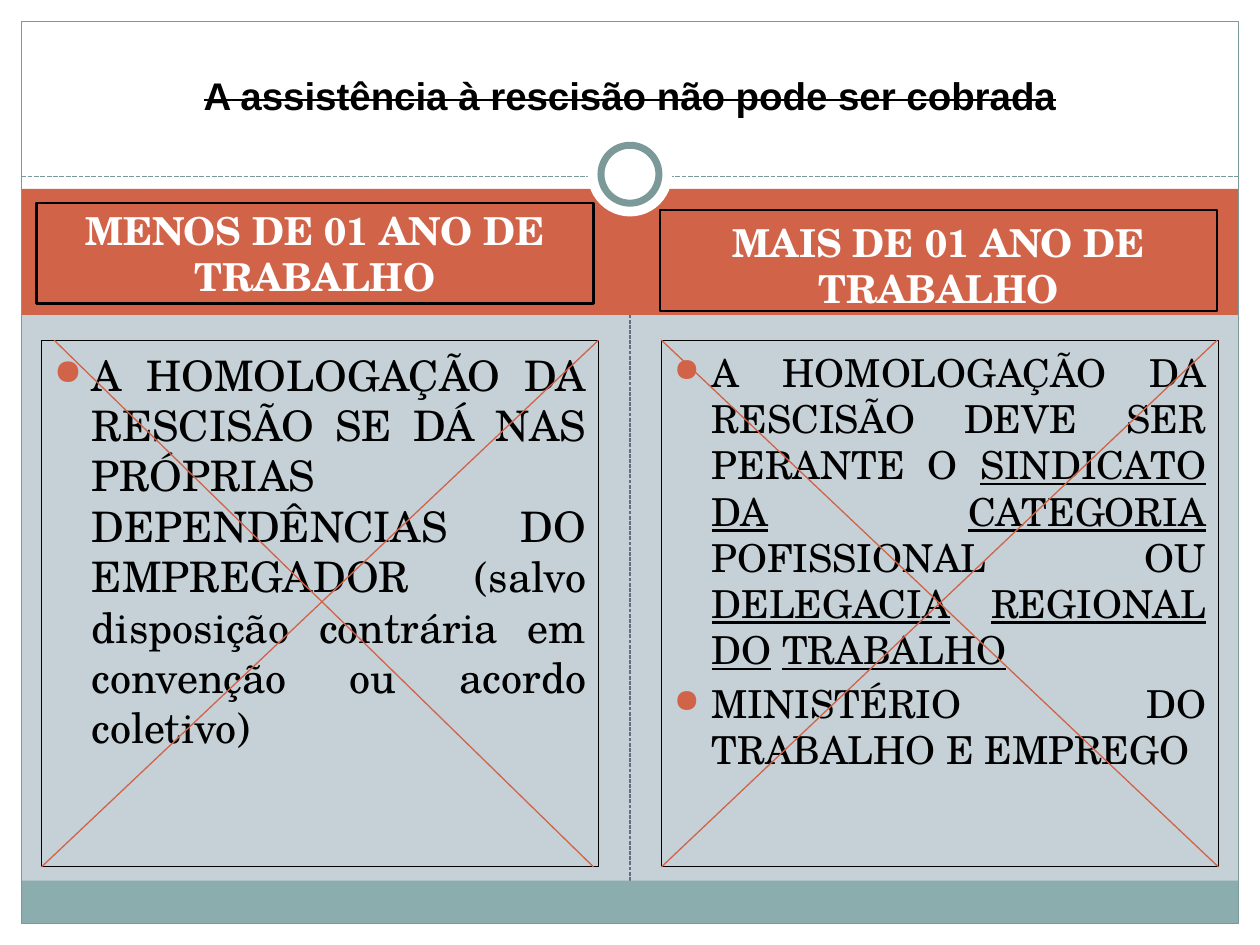
import pptx
import pptx.util
import pptx.dml.color
import pptx.enum.dml
import pptx.enum.shapes
import pptx.enum.text
import lxml.etree
from dataclasses import dataclass
from typing import NamedTuple, Optional

RGB = pptx.dml.color.RGBColor
WHITE = RGB(0xFF, 0xFF, 0xFF)
BLACK = RGB(0, 0, 0)
RUST = RGB(0xD1, 0x63, 0x49)
TEAL = RGB(0x8C, 0xAD, 0xAE)
SLATE = RGB(0x7C, 0x99, 0x9A)
VIOLET = RGB(0x64, 0x6B, 0x86)
MIST = RGB(0xC5, 0xD1, 0xD7)

SERIF = "TeX Gyre Schola"
COLUMNS, ROWS = 100, 75
CELL = pptx.util.Inches(0.1)
MARGIN = 1.7
INNER = COLUMNS - 2 * MARGIN
CENTER = COLUMNS / 2

RECTANGLE = pptx.enum.shapes.MSO_SHAPE.RECTANGLE
OVAL = pptx.enum.shapes.MSO_SHAPE.OVAL
ALIGN = pptx.enum.text.PP_ALIGN
ANCHOR = pptx.enum.text.MSO_ANCHOR


class Area(NamedTuple):
    column: float
    row: float
    width: float
    height: float


@dataclass
class Panel:
    area: Area
    fill: Optional[RGB] = None
    outline: Optional[RGB] = None
    weight: float = 0.75
    kind: pptx.enum.shapes.MSO_SHAPE = RECTANGLE


@dataclass
class Rule:
    start: tuple[float, float]
    end: tuple[float, float]
    color: RGB = RUST
    weight: float = 0.75
    dashed: bool = False


@dataclass
class Style:
    size: float
    face: str = SERIF
    color: RGB = BLACK
    bold: bool = False
    align: ALIGN = ALIGN.CENTER
    bullet: bool = False


@dataclass
class Topic:
    heading: str
    heading_area: Area
    heading_inset: float
    items: list[str]
    body_area: Area
    size: float
    strokes: list[tuple[float, float]]


def cells(count: float) -> int:
    return round(count * CELL)


def ring(diameter: float) -> Area:
    return Area(CENTER - diameter / 2, 13.83 - diameter / 2, diameter, diameter)


def draw_panel(page, panel: Panel):
    shape = page.shapes.add_shape(panel.kind, *map(cells, panel.area))
    shape.shadow.inherit = False
    if panel.fill is None:
        shape.fill.background()
    else:
        shape.fill.solid()
        shape.fill.fore_color.rgb = panel.fill
    if panel.outline is None:
        shape.line.fill.background()
    else:
        shape.line.color.rgb = panel.outline
        shape.line.width = pptx.util.Pt(panel.weight)
    return shape


def draw_rule(page, rule: Rule) -> None:
    line = page.shapes.add_connector(
        pptx.enum.shapes.MSO_CONNECTOR.STRAIGHT, *map(cells, rule.start + rule.end))
    line.line.color.rgb = rule.color
    line.line.width = pptx.util.Pt(rule.weight)
    if rule.dashed:
        line.line.dash_style = pptx.enum.dml.MSO_LINE.SQUARE_DOT
    properties = line._element.spPr
    lxml.etree.SubElement(properties, pptx.oxml.ns.qn("a:effectLst"))


def add_bullet(para) -> None:
    properties = para._p.get_or_add_pPr()
    properties.set("marL", str(cells(3)))
    properties.set("indent", str(-cells(3)))
    qn = pptx.oxml.ns.qn
    tint = lxml.etree.SubElement(properties, qn("a:buClr"))
    lxml.etree.SubElement(tint, qn("a:srgbClr"), val=str(RUST))
    lxml.etree.SubElement(properties, qn("a:buSzPct"), val="85000")
    lxml.etree.SubElement(properties, qn("a:buChar"), char="●")


def write(box, texts: list[str], style: Style, anchor: ANCHOR, top: float, bottom: float) -> None:
    frame = box.text_frame
    frame.word_wrap = True
    frame.vertical_anchor = anchor
    frame.margin_top, frame.margin_bottom = cells(top), cells(bottom)
    for index, text in enumerate(texts):
        para = frame.add_paragraph() if index else frame.paragraphs[0]
        para.alignment = style.align
        if index:
            para.space_before = pptx.util.Pt(style.size * 0.2)
        if style.bullet:
            add_bullet(para)
        para.font.size = pptx.util.Pt(style.size)
        para.font.name = style.face
        para.font.bold = style.bold
        para.font.color.rgb = style.color
        for position, part in enumerate(text.split("_")):
            span = para.add_run()
            span.text = part
            span.font.color.rgb = style.color
            if position % 2:
                span.font.underline = True


def draw_title(page, text: str) -> None:
    box = page.shapes.add_textbox(*map(cells, Area(5.9, 5.2, 88.2, 4.7)))
    write(box, [text], Style(22, "Arial", bold=True), ANCHOR.TOP, 0.5, 0.5)
    span = box.text_frame.paragraphs[0].runs[0]
    span._r.get_or_add_rPr().set("strike", "sngStrike")


def draw_topic(page, topic: Topic) -> None:
    heading = draw_panel(page, Panel(topic.heading_area, outline=BLACK, weight=1.25))
    write(heading, [topic.heading], Style(22, color=WHITE, bold=True),
          ANCHOR.MIDDLE, topic.heading_inset, 0)
    body = draw_panel(page, Panel(topic.body_area, outline=BLACK))
    write(body, topic.items, Style(topic.size, align=ALIGN.JUSTIFY, bullet=True),
          ANCHOR.TOP, 0.7, 0.5)
    top = topic.body_area.row
    bottom = top + topic.body_area.height
    (falling_start, falling_end), (rising_start, rising_end) = topic.strokes
    draw_rule(page, Rule((falling_start, top), (falling_end, bottom)))
    draw_rule(page, Rule((rising_start, bottom), (rising_end, top)))


BACKDROP = [
    Rule((CENTER, 69.9), (CENTER, 24.1), VIOLET, dashed=True),
    Panel(Area(0, 0, COLUMNS, 15.8), WHITE),
    Panel(Area(0, 73.3, COLUMNS, MARGIN), WHITE),
    Panel(Area(0, 0, MARGIN, ROWS), WHITE),
    Panel(Area(COLUMNS - MARGIN, 0, MARGIN, ROWS), WHITE),
    Panel(Area(MARGIN, 15, INNER, 10), RUST),
    Panel(Area(MARGIN, 69.9, INNER, 3.4), TEAL),
    Rule((MARGIN, 14), (COLUMNS - MARGIN, 14), SLATE, 0.9, True),
    Panel(Area(MARGIN, MARGIN, INNER, ROWS - 2 * MARGIN), outline=SLATE),
    Panel(ring(6.7), WHITE, kind=OVAL),
    Panel(ring(4.6), WHITE, SLATE, 4, OVAL),
]

TOPICS = [
    Topic("MENOS DE 01 ANO DE TRABALHO", Area(2.9, 16.1, 44.2, 8), 0,
          ["A HOMOLOGAÇÃO DA RESCISÃO SE DÁ NAS PRÓPRIAS DEPENDÊNCIAS DO EMPREGADOR "
           "(salvo disposição contrária em convenção ou acordo coletivo)"],
          Area(3.3, 27, 44.2, 41.8), 24, [(4.3, 47.1), (3.3, 47.5)]),
    Topic("MAIS DE 01 ANO DE TRABALHO", Area(52.4, 16.7, 44.2, 8), 0.7,
          ["A HOMOLOGAÇÃO DA RESCISÃO DEVE SER PERANTE O _SINDICATO_ _DA_ _CATEGORIA_ "
           "POFISSIONAL OU _DELEGACIA_ _REGIONAL_ _DO_ _TRABALHO_",
           "MINISTÉRIO DO TRABALHO E EMPREGO"],
          Area(52.5, 27, 44.2, 41.8), 22, [(52.5, 96.7), (52.5, 96.6)]),
]


def main() -> None:
    deck = pptx.Presentation()
    deck.slide_width, deck.slide_height = cells(COLUMNS), cells(ROWS)
    page = deck.slides.add_slide(deck.slide_layouts[6])
    page.background.fill.solid()
    page.background.fill.fore_color.rgb = MIST
    for part in BACKDROP:
        if isinstance(part, Rule):
            draw_rule(page, part)
        else:
            draw_panel(page, part)
    draw_title(page, "A assistência à rescisão não pode ser cobrada")
    for topic in TOPICS:
        draw_topic(page, topic)
    deck.save("out.pptx")


if __name__ == "__main__":
    main()
